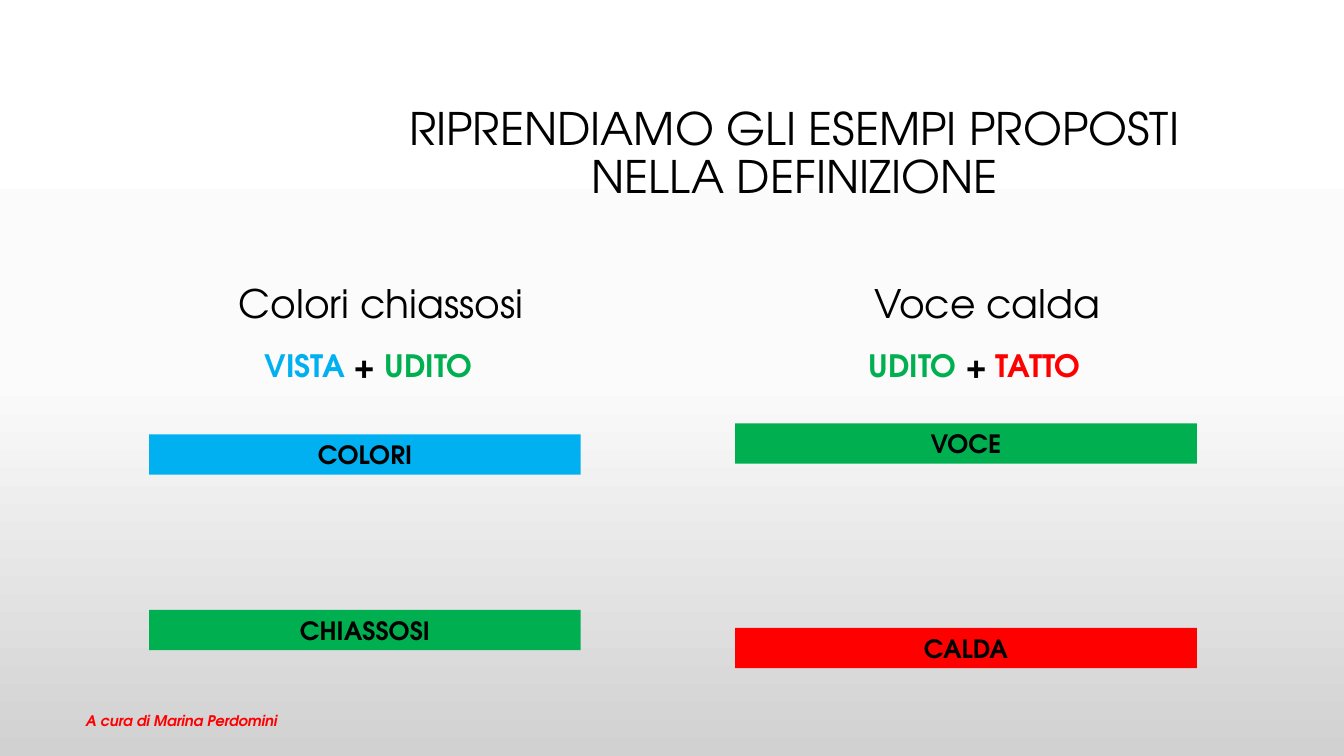
from copy import deepcopy

from pptx import Presentation
from pptx.dml.color import RGBColor
from pptx.enum.shapes import MSO_SHAPE
from pptx.enum.text import MSO_ANCHOR, PP_ALIGN
from pptx.oxml.ns import qn
from pptx.util import Inches, Pt

RECTANGLE = MSO_SHAPE.RECTANGLE
TOP, MIDDLE, BOTTOM = MSO_ANCHOR.TOP, MSO_ANCHOR.MIDDLE, MSO_ANCHOR.BOTTOM
LEFT, CENTER = PP_ALIGN.LEFT, PP_ALIGN.CENTER

FONT = "TeX Gyre Adventor"
COLORS = {"black": "000000", "blue": "00B0F0", "green": "00B050", "red": "FF0000"}
BACKGROUND = [(0, "FFFFFF"), (0.5, "FBFBFB"), (1, "D1D1D1")]

TITLE = ["RIPRENDIAMO GLI ESEMPI PROPOSTI", "NELLA DEFINIZIONE"]
CREDIT = "A cura di Marina Perdomini"
# Each sense is (name, color); each bar is (word, top), in the color of its sense.
EXAMPLES = [
    {
        "heading": "Colori chiassosi",
        "heading_span": (1, 5.56),
        "senses": [("VISTA", "blue"), ("UDITO", "green")],
        "senses_span": (0.75, 5.81),
        "bars": [("COLORI", 4.31), ("CHIASSOSI", 6.05)],
        "bar_span": (1.48, 4.28),
    },
    {
        "heading": "Voce calda",
        "heading_span": (7, 5.58),
        "senses": [("UDITO", "green"), ("TATTO", "red")],
        "senses_span": (6.75, 5.83),
        "bars": [("VOCE", 4.2), ("CALDA", 6.23)],
        "bar_span": (7.29, 4.58),
    },
]
HEADING_TOP, HEADING_HEIGHT = 2.39, 0.9
SENSES_TOP, SENSES_HEIGHT = 3.43, 3.37
BAR_HEIGHT = 0.4


def paint_background(slide):
    fill = slide.background.fill
    fill.gradient()
    fill.gradient_angle = 270
    stop_list = slide.element.find(".//" + qn("a:gsLst"))
    stop_list.append(deepcopy(stop_list[-1]))
    for stop, (position, color) in zip(fill.gradient_stops, BACKGROUND):
        stop.position = position
        stop.color.rgb = RGBColor.from_string(color)


def write(shape, lines, size, anchor, align=CENTER, spacing=0.9, bold=False, italic=False):
    """Fill a shape with one paragraph; each line is a list of (text, color) runs."""
    frame = shape.text_frame
    frame.word_wrap = True
    frame.vertical_anchor = anchor
    paragraph = frame.paragraphs[0]
    paragraph.alignment = align
    paragraph.line_spacing = spacing
    for index, line in enumerate(lines):
        if index:
            paragraph.add_line_break()
        for text, color in line:
            run = paragraph.add_run()
            run.text = text
            font = run.font
            font.name, font.size = FONT, Pt(size)
            font.bold, font.italic = bold, italic
            font.color.rgb = RGBColor.from_string(COLORS[color])


def add_text(slide, box, lines, size, anchor, **style):
    write(slide.shapes.add_textbox(*map(Inches, box)), lines, size, anchor, **style)


def add_bar(slide, box, word, color):
    bar = slide.shapes.add_shape(RECTANGLE, *map(Inches, box))
    bar.shadow.inherit = False
    bar.fill.solid()
    bar.fill.fore_color.rgb = RGBColor.from_string(COLORS[color])
    bar.line.fill.background()
    write(bar, [[(word, "black")]], 18, MIDDLE, spacing=1, bold=True)


def add_example(slide, example):
    left, width = example["heading_span"]
    add_text(slide, (left, HEADING_TOP, width, HEADING_HEIGHT),
             [[(example["heading"], "black")]], 28, BOTTOM)

    left, width = example["senses_span"]
    first, second = example["senses"]
    add_text(slide, (left, SENSES_TOP, width, SENSES_HEIGHT),
             [[first, (" + ", "black"), second]], 22, TOP, bold=True)

    left, width = example["bar_span"]
    for (word, top), (_, color) in zip(example["bars"], example["senses"]):
        add_bar(slide, (left, top, width, BAR_HEIGHT), word, color)


def main():
    deck = Presentation()
    deck.slide_width, deck.slide_height = Inches(13.33), Inches(7.5)
    slide = deck.slides.add_slide(deck.slide_layouts[6])
    paint_background(slide)
    add_text(slide, (3.17, 0.83, 9.42, 1.42),
             [[(line, "black")] for line in TITLE], 32, MIDDLE)
    for example in EXAMPLES:
        add_example(slide, example)
    add_text(slide, (0.75, 6.95, 8.5, 0.4), [[(CREDIT, "red")]], 10.5, MIDDLE,
             align=LEFT, spacing=1, bold=True, italic=True)
    deck.save("out.pptx")


if __name__ == "__main__":
    main()
